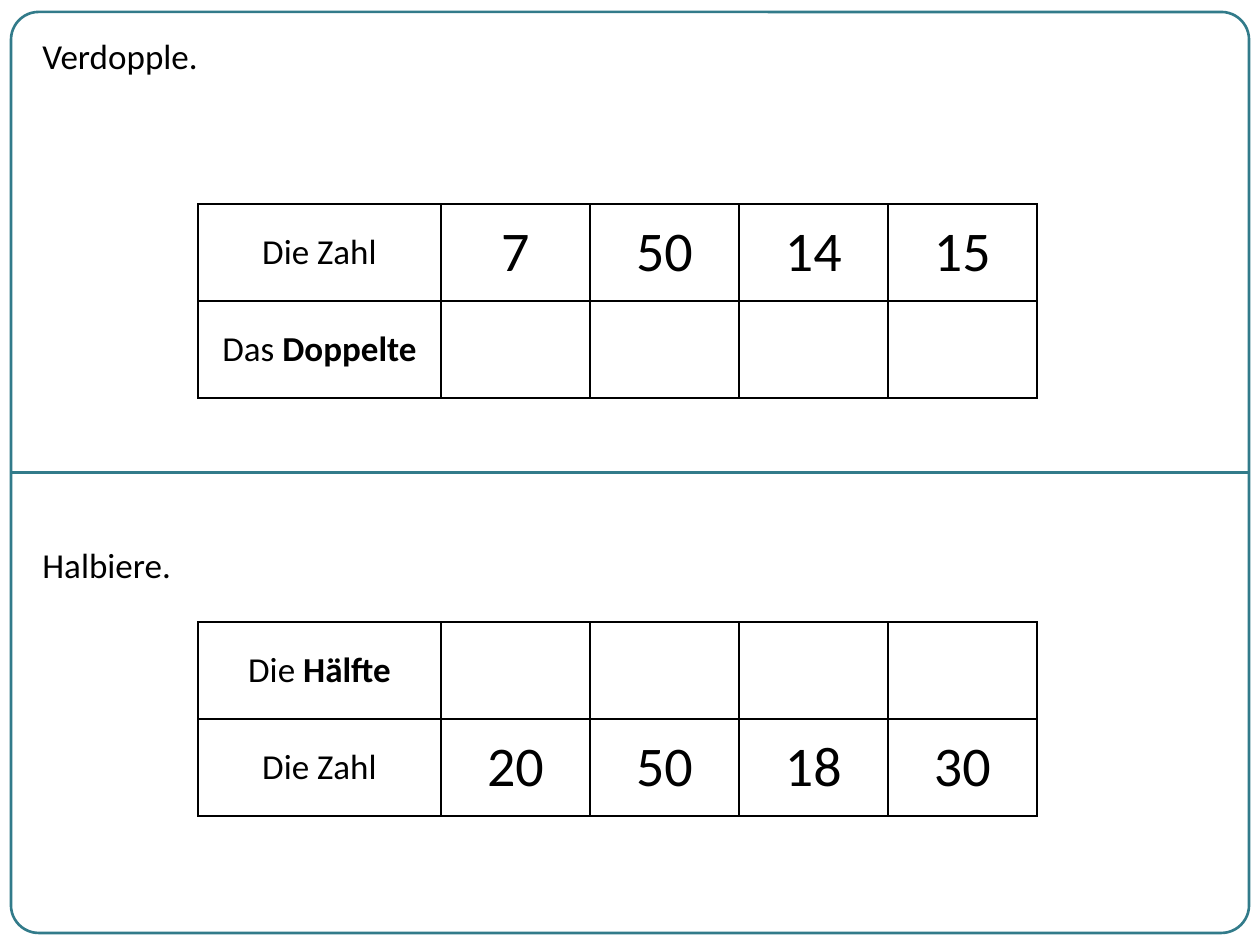
from lxml import etree
from pptx import Presentation
from pptx.dml.color import RGBColor
from pptx.enum.shapes import MSO_CONNECTOR, MSO_SHAPE
from pptx.enum.text import MSO_ANCHOR, PP_ALIGN
from pptx.oxml.ns import qn
from pptx.util import Emu, Pt

ROUNDED = MSO_SHAPE.ROUNDED_RECTANGLE
STRAIGHT = MSO_CONNECTOR.STRAIGHT
MIDDLE = MSO_ANCHOR.MIDDLE
CENTER = PP_ALIGN.CENTER
LEFT_SIDE, RIGHT_SIDE = 1, 3

TEAL, BLACK = "327B8A", "000000"
FONT = "Calibri"
LABEL_SIZE, NUMBER_SIZE = 20, 32
FRAME = (11, 12, 1238, 921)
COLUMN_WIDTHS = (243, 149, 149, 149, 149)
ROW_HEIGHT = 97
CELL_MARGIN = 6


def px(length):
    """Turn pixels into EMU."""
    return Emu(round(length * 914400 / 126))


def color(value):
    """Turn a hex string into a colour."""
    return RGBColor.from_string(value)


def style_line(line):
    """Give a line the frame's colour and width."""
    line.color.rgb = color(TEAL)
    line.width = Pt(1.5)


def add_run(paragraph, text, size, bold=False):
    """Add one formatted run."""
    run = paragraph.add_run()
    run.text = text
    run.font.name = FONT
    run.font.size = Pt(size)
    run.font.bold = bold
    run.font.color.rgb = color(BLACK)


def add_borders(cell):
    """Draw a thin black line on all four sides of a cell."""
    properties = cell._tc.get_or_add_tcPr()
    for index, side in enumerate(("a:lnL", "a:lnR", "a:lnT", "a:lnB")):
        border = etree.Element(qn(side), w=str(Pt(1)))
        fill = etree.SubElement(border, qn("a:solidFill"))
        etree.SubElement(fill, qn("a:srgbClr"), val=BLACK)
        properties.insert(index, border)


def fill_cell(cell, runs, size):
    """Style a cell and write its (text, bold) runs."""
    cell.fill.background()
    add_borders(cell)
    cell.vertical_anchor = MIDDLE
    cell.margin_left = cell.margin_right = px(CELL_MARGIN)
    cell.margin_top = cell.margin_bottom = px(CELL_MARGIN)
    paragraph = cell.text_frame.paragraphs[0]
    paragraph.alignment = CENTER
    for text, bold in runs:
        add_run(paragraph, text, size, bold)


def add_number_table(slide, left, top, rows):
    """Place a table of labelled rows of numbers."""
    shape = slide.shapes.add_table(
        len(rows), len(COLUMN_WIDTHS), px(left), px(top),
        px(sum(COLUMN_WIDTHS)), px(ROW_HEIGHT * len(rows)))
    table = shape.table
    table.first_row = table.horz_banding = False
    for column, width in zip(table.columns, COLUMN_WIDTHS):
        column.width = px(width)
    for row, (label, numbers) in zip(table.rows, rows):
        row.height = px(ROW_HEIGHT)
        label_cell, *number_cells = row.cells
        fill_cell(label_cell, label, LABEL_SIZE)
        for index, cell in enumerate(number_cells):
            runs = [(numbers[index], False)] if numbers else []
            fill_cell(cell, runs, NUMBER_SIZE)


def add_exercise(slide, left, top, task, task_offset, table_offset, rows):
    """Place a task line and its table in one half of the frame."""
    box = slide.shapes.add_textbox(
        px(left + 19), px(top + task_offset), px(902), px(55))
    box.text_frame.word_wrap = True
    add_run(box.text_frame.paragraphs[0], task, LABEL_SIZE)
    add_number_table(slide, left + 187, top + table_offset, rows)


def add_frame(slide, left, top, width, height):
    """Draw the rounded frame and the line that halves it."""
    frame = slide.shapes.add_shape(
        ROUNDED, px(left), px(top), px(width), px(height))
    frame.adjustments[0] = 0.03
    frame.shadow.inherit = False
    frame.fill.background()
    style_line(frame.line)
    middle = px(top + height / 2)
    divider = slide.shapes.add_connector(
        STRAIGHT, px(left), middle, px(left + width), middle)
    divider.begin_connect(frame, LEFT_SIDE)
    divider.end_connect(frame, RIGHT_SIDE)
    style_line(divider.line)
    etree.SubElement(divider._element.spPr, qn("a:effectLst"))


def main():
    """Build the worksheet slide."""
    presentation = Presentation()
    presentation.slide_width, presentation.slide_height = px(1260), px(945)
    slide = presentation.slides.add_slide(presentation.slide_layouts[6])
    add_frame(slide, *FRAME)
    left, top, _, height = FRAME
    number_label = [("Die Zahl", False)]
    add_exercise(slide, left, top, "Verdopple.", 16, 192, [
        (number_label, ("7", "50", "14", "15")),
        ([("Das ", False), ("Doppelte", True)], ()),
    ])
    add_exercise(slide, left, top + height // 2, "Halbiere.", 65, 150, [
        ([("Die ", False), ("Hälfte", True)], ()),
        (number_label, ("20", "50", "18", "30")),
    ])
    presentation.save("out.pptx")


if __name__ == "__main__":
    main()
